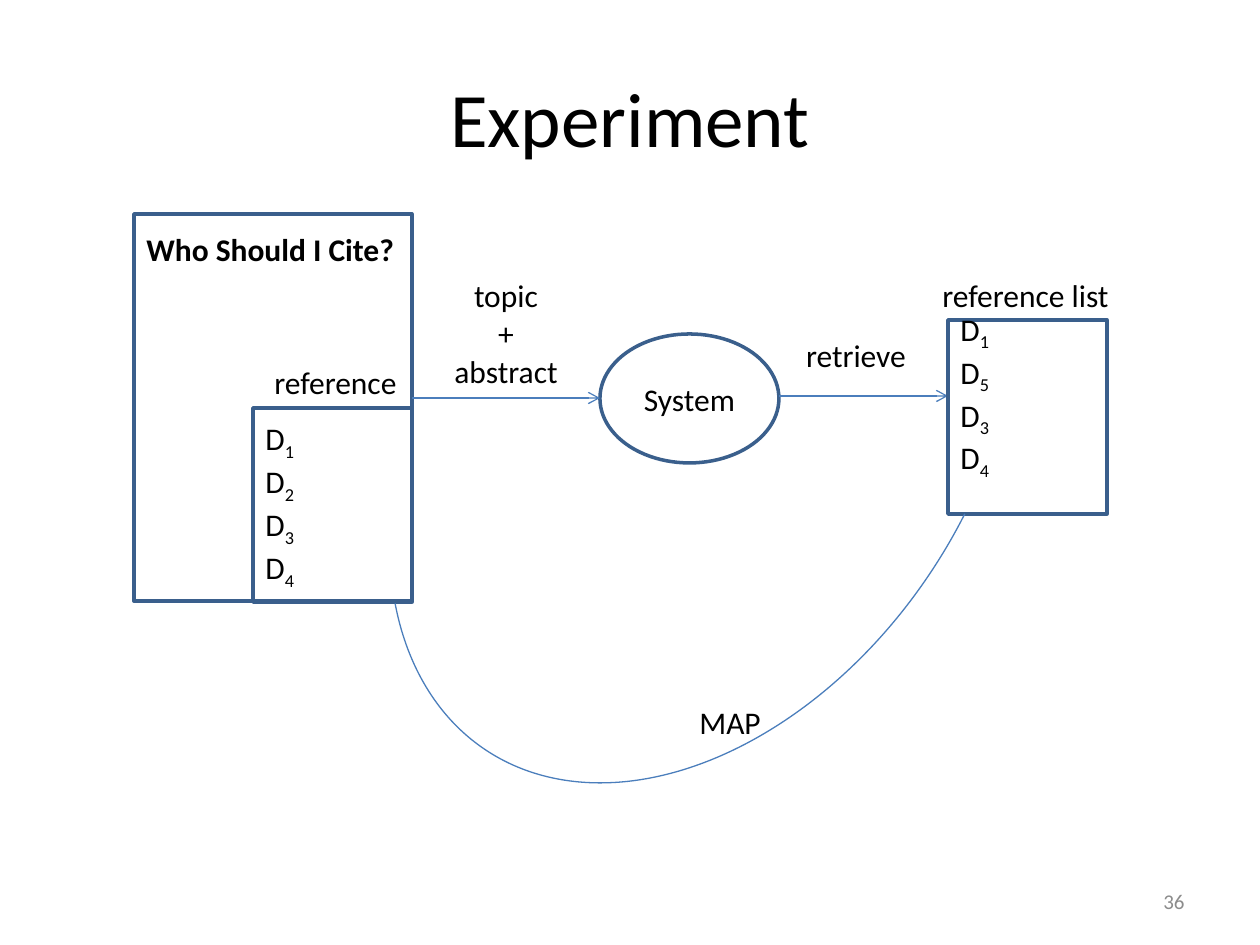
from lxml import etree
from pptx import Presentation
from pptx.dml.color import RGBColor
from pptx.enum.shapes import MSO_CONNECTOR, MSO_SHAPE
from pptx.enum.text import MSO_ANCHOR, PP_ALIGN
from pptx.oxml.ns import qn
from pptx.util import Emu, Pt

RECT, OVAL, ARC = MSO_SHAPE.RECTANGLE, MSO_SHAPE.OVAL, MSO_SHAPE.ARC
STRAIGHT = MSO_CONNECTOR.STRAIGHT
LEFT, CENTER, RIGHT = PP_ALIGN.LEFT, PP_ALIGN.CENTER, PP_ALIGN.RIGHT
TOP, MIDDLE = MSO_ANCHOR.TOP, MSO_ANCHOR.MIDDLE
FONT = "Calibri"
COLORS = {"text": "000000", "page": "8C8C8C", "edge": "3A5F8C", "link": "4B7EBC"}


def px(n):
    return Emu(round(n * 914400 / 126))


def rgb(name):
    return RGBColor.from_string(COLORS[name])


def add_run(para, text, size=18, color="text", bold=False, sub=False):
    run = para.add_run()
    run.text = text
    font = run.font
    font.name, font.size, font.bold = FONT, Pt(size), bold
    font.color.rgb = rgb(color)
    if sub:
        run._r.get_or_add_rPr().set("baseline", "-25000")


def add_paras(frame, count, align):
    for _ in range(count - 1):
        frame.add_paragraph()
    for para in frame.paragraphs:
        para.alignment = align
    return frame.paragraphs


def add_label(slide, box, lines, align=LEFT, wrap=False, anchor=TOP, **style):
    frame = slide.shapes.add_textbox(*map(px, box)).text_frame
    frame.word_wrap = wrap
    frame.vertical_anchor = anchor
    for para, text in zip(add_paras(frame, len(lines), align), lines):
        add_run(para, text, **style)


def add_outline(slide, kind, box, color="edge", width=2):
    shape = slide.shapes.add_shape(kind, *map(px, box))
    shape.shadow.inherit = False
    shape.fill.background()
    shape.line.color.rgb = rgb(color)
    shape.line.width = Pt(width)
    shape.text_frame.vertical_anchor = MIDDLE
    return shape


def add_docs(slide, box, nums, base=0):
    frame = add_outline(slide, RECT, box).text_frame
    frame.margin_top, frame.margin_bottom = 0, px(base)
    for para, num in zip(add_paras(frame, len(nums), LEFT), nums):
        add_run(para, "D")
        add_run(para, num, sub=True)


def add_arrow(slide, left, right, y):
    link = slide.shapes.add_connector(STRAIGHT, px(left), px(y), px(right), px(y))
    link.line.color.rgb = rgb("link")
    link.line.width = Pt(0.75)
    etree.SubElement(link.line._get_or_add_ln(), qn("a:tailEnd"), type="arrow")
    etree.SubElement(link._element.spPr, qn("a:effectLst"))


def add_arc(slide, box, turn, start, end):
    arc = add_outline(slide, ARC, box, "link", 0.75)
    arc.rotation = turn
    arc.adjustments[0] = start
    arc.adjustments[1] = end


def main():
    prs = Presentation()
    prs.slide_width, prs.slide_height = px(1260), px(945)
    slide = prs.slides.add_slide(prs.slide_layouts[6])

    add_label(slide, (63, 38, 1134, 158), ["Experiment"], CENTER, True, MIDDLE, size=44)
    add_label(slide, (903, 876, 294, 50), ["36"], RIGHT, True, MIDDLE, size=12, color="page")

    add_label(slide, (134, 224, 277, 50), ["Who Should I Cite?"], wrap=True, bold=True)
    add_outline(slide, RECT, (134, 214, 278, 387))
    add_docs(slide, (253, 408, 159, 194), "1234")
    add_label(slide, (262, 357, 149, 50), ["reference"])

    system = add_outline(slide, OVAL, (600, 334, 179, 129))
    add_run(add_paras(system.text_frame, 1, CENTER)[0], "System")
    add_arrow(slide, 412, 600, 398)
    add_label(slide, (441, 270, 130, 127), ["topic", "+", "abstract"], CENTER)
    add_arrow(slide, 779, 948, 396)
    add_label(slide, (793, 330, 126, 50), ["retrieve"], CENTER)

    add_docs(slide, (948, 320, 159, 194), "1534", 43)
    add_label(slide, (930, 270, 194, 50), ["reference list"])
    add_arc(slide, (310, 150, 788, 544), 123.7, 153.42, 15.52)
    add_label(slide, (687, 697, 87, 50), ["MAP"])
    prs.save("out.pptx")


if __name__ == "__main__":
    main()
